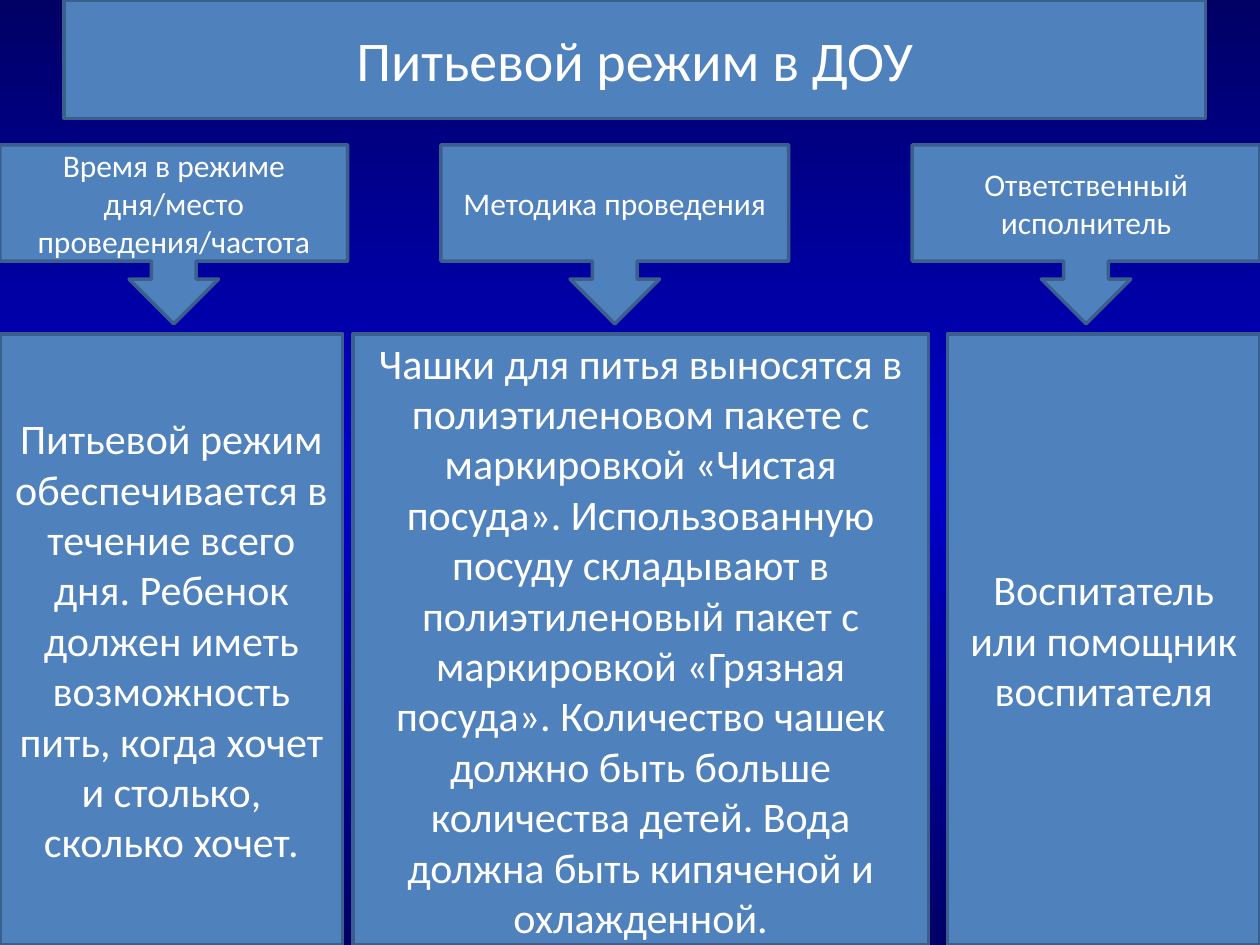
import copy
from dataclasses import dataclass

import pptx
import pptx.dml.color
import pptx.enum.shapes
import pptx.enum.text
import pptx.util

Inches = pptx.util.Inches
RGB = pptx.dml.color.RGBColor.from_string
SHAPES = pptx.enum.shapes.MSO_SHAPE


@dataclass(frozen=True)
class Theme:
    font: str = "Calibri"
    fill: str = "4F81BD"
    line: str = "3A5F8C"
    text: str = "FFFFFF"
    line_width: float = 2
    title_size: int = 32
    heading_size: int = 18
    body_size: int = 24
    background: tuple = ((0, "000064"), (0.5, "0000CC"), (1, "000066"))


THEME = Theme()
SLIDE_WIDTH, SLIDE_HEIGHT = 10, 7.5
HEADING_TOP, HEADING_WIDTH, HEADING_HEIGHT = 1.15, 2.76, 1.42
BODY_TOP = 2.65

TITLE = "Питьевой режим в ДОУ"
# Heading, body text, body left, body width
COLUMNS = [
    ("Время в режиме дня/место проведения/частота",
     "Питьевой режим обеспечивается в течение всего дня. Ребенок должен иметь "
     "возможность пить, когда хочет и столько, сколько хочет.",
     0, 2.72),
    ("Методика проведения",
     "Чашки для питья выносятся в полиэтиленовом пакете с маркировкой «Чистая "
     "посуда». Использованную посуду складывают в полиэтиленовый пакет с "
     "маркировкой «Грязная посуда». Количество чашек должно быть больше "
     "количества детей. Вода должна быть кипяченой и охлажденной.",
     2.8, 4.57),
    ("Ответственный исполнитель",
     "Воспитатель или помощник воспитателя",
     7.52, 2.48),
]


def set_format(target, values):
    for name, value in values.items():
        setattr(target, name, value)


def add_panel(page, kind, box, text, size):
    """Place a filled shape with centred text in box (left, top, width, height)."""
    panel = page.shapes.add_shape(kind, *map(Inches, box))
    panel.shadow.inherit = False
    panel.fill.solid()
    panel.fill.fore_color.rgb = RGB(THEME.fill)
    panel.line.color.rgb = RGB(THEME.line)
    panel.line.width = pptx.util.Pt(THEME.line_width)
    set_format(panel.text_frame, {
        "word_wrap": True,
        "vertical_anchor": pptx.enum.text.MSO_ANCHOR.MIDDLE,
    })
    para = panel.text_frame.paragraphs[0]
    para.alignment = pptx.enum.text.PP_ALIGN.CENTER
    span = para.add_run()
    span.text = text
    set_format(span.font, {"name": THEME.font, "size": pptx.util.Pt(size)})
    span.font.color.rgb = RGB(THEME.text)


def paint_background(page):
    fill = page.background.fill
    fill.gradient()
    fill.gradient_angle = 270
    # The default gradient has two stops; the middle one is a copy of the first
    first_stop = page.element.xpath(".//a:gs")[0]
    first_stop.addnext(copy.deepcopy(first_stop))
    for stop, (position, color) in zip(fill.gradient_stops, THEME.background):
        stop.position = position
        stop.color.rgb = RGB(color)


def add_title(page, box):
    add_panel(page, SHAPES.RECTANGLE, box, TITLE, THEME.title_size)


def add_headings(page, box):
    """Spread the arrow callouts evenly over the width of box."""
    left, top, width, height = box
    step = (width - HEADING_WIDTH) / (len(COLUMNS) - 1)
    for index, (heading, *_) in enumerate(COLUMNS):
        # The middle callout sits slightly left of centre
        nudge = -0.12 if index == 1 else 0
        callout_box = (left + index * step + nudge, top, HEADING_WIDTH, height)
        add_panel(page, SHAPES.DOWN_ARROW_CALLOUT, callout_box, heading,
                  THEME.heading_size)


def add_bodies(page, box):
    left, top, _, height = box
    for _, body, offset, width in COLUMNS:
        add_panel(page, SHAPES.RECTANGLE, (left + offset, top, width, height),
                  body, THEME.body_size)


def main():
    deck = pptx.Presentation()
    set_format(deck, {"slide_width": Inches(SLIDE_WIDTH),
                      "slide_height": Inches(SLIDE_HEIGHT)})
    page = deck.slides.add_slide(deck.slide_layouts[6])
    paint_background(page)
    add_title(page, (0.51, 0, 9.06, 0.94))
    add_headings(page, (0, HEADING_TOP, SLIDE_WIDTH, HEADING_HEIGHT))
    add_bodies(page, (0, BODY_TOP, SLIDE_WIDTH, SLIDE_HEIGHT - BODY_TOP))
    deck.save("out.pptx")


if __name__ == "__main__":
    main()
